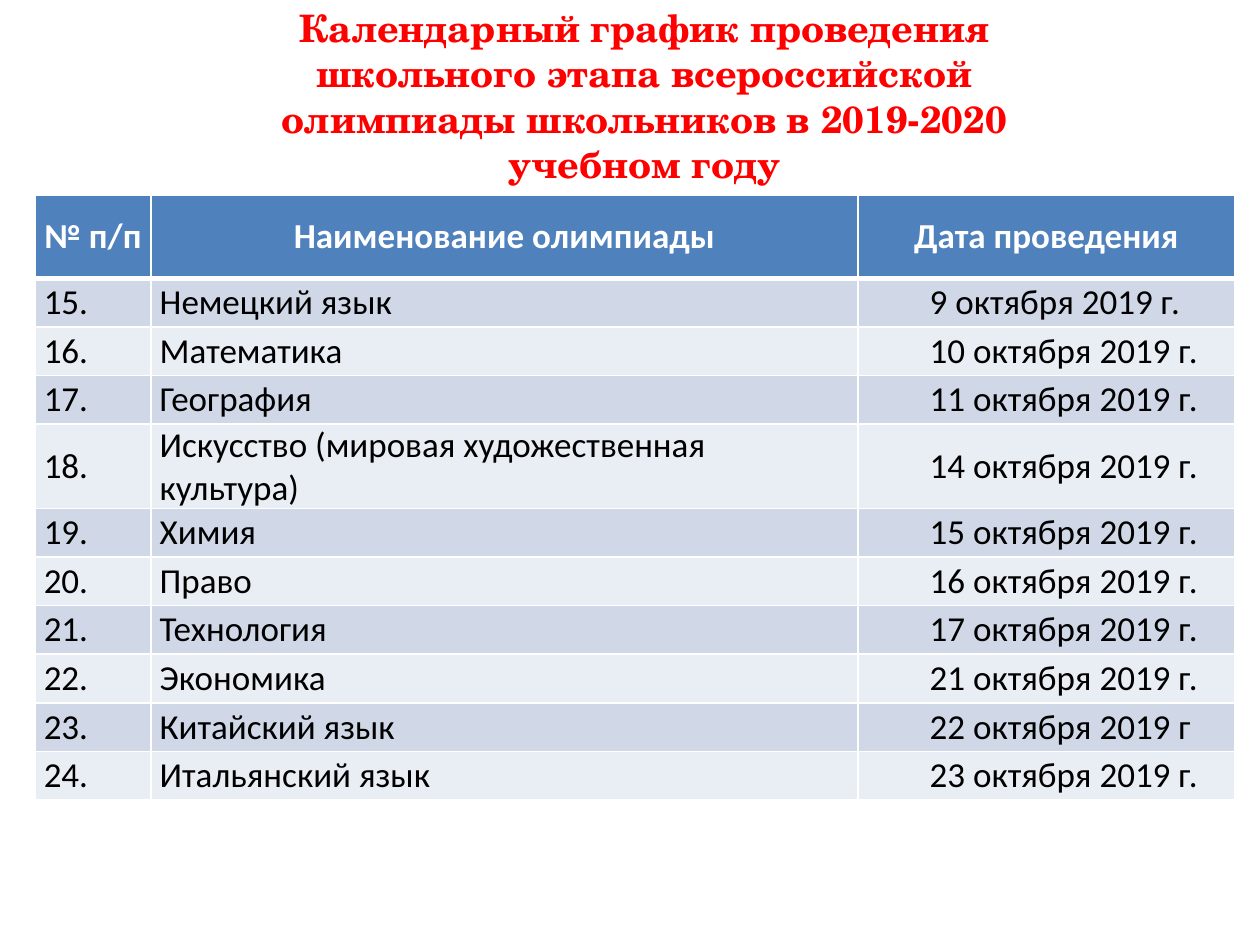
from pptx import Presentation
from pptx.dml.color import RGBColor
from pptx.enum.text import MSO_ANCHOR, PP_ALIGN
from pptx.oxml.ns import qn
from pptx.util import Pt
from lxml import etree

MIDDLE = MSO_ANCHOR.MIDDLE
LEFT, CENTER = PP_ALIGN.LEFT, PP_ALIGN.CENTER

TITLE = ("Календарный график проведения школьного этапа всероссийской "
         "олимпиады школьников в 2019-2020 учебном году")
HEADER = ("№ п/п", "Наименование олимпиады", "Дата проведения")
OLYMPIADS = [
    ("Немецкий язык", "9 октября 2019 г."),
    ("Математика", "10 октября 2019 г."),
    ("География", "11 октября 2019 г."),
    ("Искусство (мировая художественная культура)", "14 октября 2019 г."),
    ("Химия", "15 октября 2019 г."),
    ("Право", "16 октября 2019 г."),
    ("Технология", "17 октября 2019 г."),
    ("Экономика", "21 октября 2019 г."),
    ("Китайский язык", "22 октября 2019 г"),
    ("Итальянский язык", "23 октября 2019 г."),
]
FIRST_NUMBER = 15
TALL_ROWS = (0, 4)
TALL, SHORT = 47.5, 27.8
COL_WIDTHS = (66.3, 404, 215.2)
TABLE_LEFT, TABLE_TOP = 20, 111.6
DATE_COL, DATE_INDENT = 2, 36

HEADER_FILL = "4F81BD"
BAND_FILLS = ("D0D8E8", "E9EDF4")
WHITE, BLACK, RED = "FFFFFF", "000000", "FF0000"
TITLE_FONT = dict(name="TeX Gyre Schola", size=Pt(21.6), bold=True)
HEADER_FONT = dict(name="Calibri", size=Pt(20), bold=True)
BODY_FONT = dict(HEADER_FONT, bold=False)
CELL_FORMAT = dict(vertical_anchor=MIDDLE, margin_left=Pt(5), margin_right=Pt(5),
                   margin_top=0, margin_bottom=0)


def rgb(color):
    return RGBColor.from_string(color)


def apply(obj, values):
    for name, value in values.items():
        setattr(obj, name, value)


def write(tf, text, font, color, align):
    p = tf.paragraphs[0]
    p.alignment = align
    r = p.add_run()
    r.text = text
    apply(r.font, font)
    r.font.color.rgb = rgb(color)
    return p


def add_borders(cell, widths):
    tc_pr = cell._tc.get_or_add_tcPr()
    for i, (side, width) in enumerate(widths.items()):
        ln = etree.Element(qn(f"a:{side}"), w=str(Pt(width)))
        fill = etree.SubElement(ln, qn("a:solidFill"))
        etree.SubElement(fill, qn("a:srgbClr"), val=WHITE)
        tc_pr.insert(i, ln)


def add_title(s):
    sp = s.shapes.add_textbox(Pt(116), Pt(9.4), Pt(504.7), Pt(90))
    tf = sp.text_frame
    apply(tf, dict(word_wrap=True, vertical_anchor=MIDDLE))
    write(tf, TITLE, TITLE_FONT, RED, CENTER)


def add_schedule(s):
    rows = [HEADER] + [(f"{n}.", *row) for n, row in enumerate(OLYMPIADS, FIRST_NUMBER)]
    heights = [TALL if i in TALL_ROWS else SHORT for i in range(len(rows))]
    table = s.shapes.add_table(len(rows), len(HEADER), Pt(TABLE_LEFT), Pt(TABLE_TOP),
                               Pt(sum(COL_WIDTHS)), Pt(sum(heights))).table
    for col, width in zip(table.columns, COL_WIDTHS):
        col.width = Pt(width)
    for i, (row, height) in enumerate(zip(rows, heights)):
        table.rows[i].height = Pt(height)
        is_header = i == 0
        fill = HEADER_FILL if is_header else BAND_FILLS[(i - 1) % 2]
        for j, text in enumerate(row):
            cell = table.cell(i, j)
            apply(cell, CELL_FORMAT)
            cell.fill.solid()
            cell.fill.fore_color.rgb = rgb(fill)
            add_borders(cell, dict(lnL=1, lnR=1, lnT=3 if i == 1 else 1,
                                   lnB=3 if is_header else 1))
            if is_header:
                write(cell.text_frame, text, HEADER_FONT, WHITE, CENTER)
                continue
            p = write(cell.text_frame, text, BODY_FONT, BLACK, LEFT)
            if j == DATE_COL:
                p.level = 1
                p_pr = p._p.get_or_add_pPr()
                p_pr.set("marL", str(Pt(DATE_INDENT)))
                p_pr.set("indent", "0")


def main():
    prs = Presentation()
    apply(prs, dict(slide_width=Pt(720), slide_height=Pt(540)))
    s = prs.slides.add_slide(prs.slide_layouts[6])
    add_title(s)
    add_schedule(s)
    prs.save("out.pptx")


if __name__ == "__main__":
    main()
